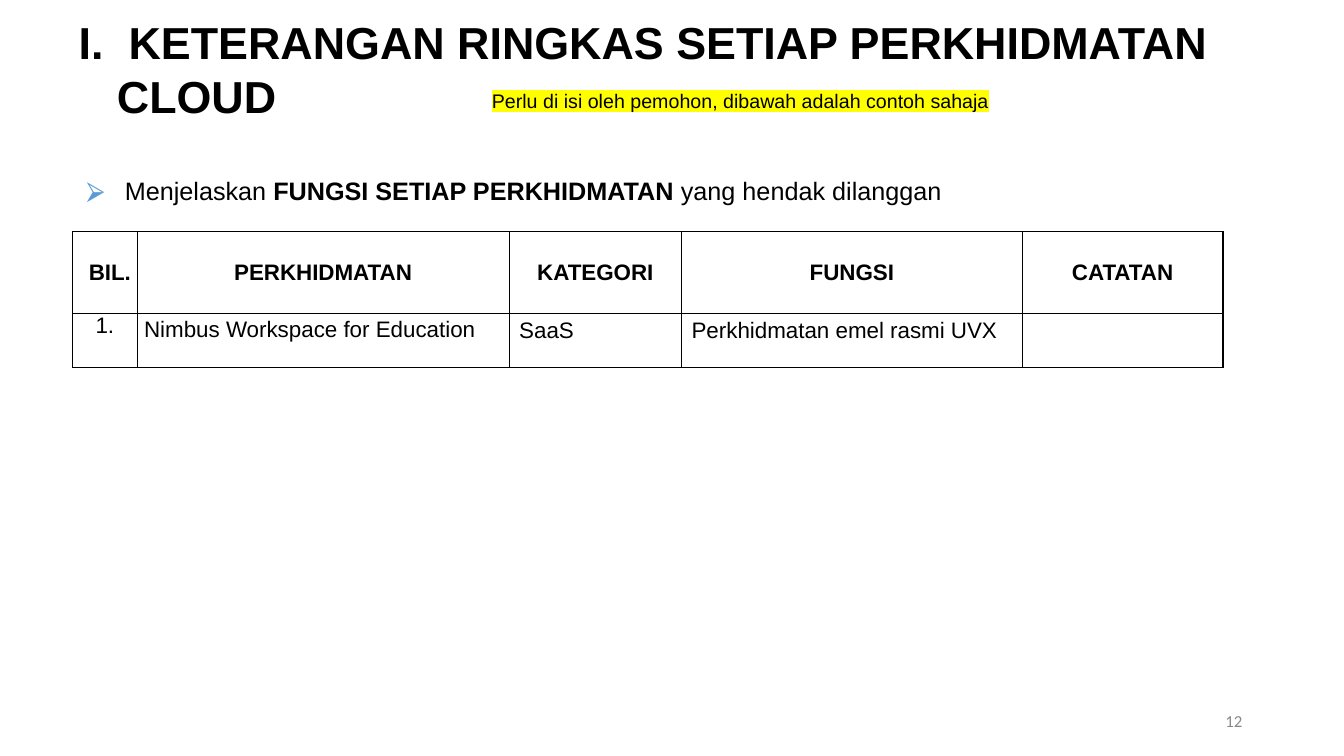
"""Build the slide that describes each cloud service."""
from dataclasses import dataclass

from lxml.etree import SubElement
from pptx import Presentation
from pptx.dml.color import RGBColor
from pptx.enum.text import MSO_ANCHOR, PP_ALIGN
from pptx.oxml.ns import qn
from pptx.util import Inches, Pt

TITLE = [("I.", {}), (" ", {"spacing": 9}),
         ("KETERANGAN RINGKAS SETIAP PERKHIDMATAN CLOUD", {})]
NOTICE = "Perlu di isi oleh pemohon, dibawah adalah contoh sahaja"
POINT = [("Menjelaskan ", {}), ("FUNGSI SETIAP PERKHIDMATAN ", {"bold": True}),
         ("yang hendak dilanggan", {})]
PAGE_NUMBER = "12"
HEADERS = ["BIL.", "PERKHIDMATAN", "KATEGORI", "FUNGSI", "CATATAN"]
SERVICES = [["1.", "Nimbus Workspace for Education", "SaaS", "Perkhidmatan emel rasmi UVX", ""]]
COLUMNS = [0.64, 3.69, 1.71, 3.38, 1.99]
HEADER_ROW, SERVICE_ROW = 0.81, 0.54
LEFT, TABLE_TOP = 0.72, 2.3
HANGING = 0.38
TIGHT, SNUG, ROOMY = (0.01, 0.01, 0.01, 0), (0.07, 0.04, 0.07, 0.04), (0.1, 0.05, 0.1, 0.05)
HEADER_MARGINS = [(0, 0, 0, 0)] * 2 + [TIGHT] * 3
SERVICE_MARGINS = [TIGHT, SNUG, ROOMY, ROOMY, ROOMY]


@dataclass(frozen=True)
class Theme:
    """Colours, fonts and type sizes."""
    ink: str = "000000"
    muted: str = "888888"
    accent: str = "5B9BD5"
    marker: str = "FFFF00"
    font: str = "Arial"
    number_font: str = "Calibri"
    title: int = 32
    point: int = 18
    cell: int = 16
    notice: int = 14
    number: int = 12


THEME = Theme()


def add_colour(parent, colour):
    """Append an RGB colour to an XML element."""
    SubElement(parent, qn("a:srgbClr"), val=colour)


def write(para, text, size=THEME.cell, font=THEME.font, colour=THEME.ink, bold=False,
          highlight=None, spacing=None, align=None, hanging=0, indent=0, bullet=None,
          line_spacing=None):
    """Write a string, or a list of (string, format) pairs, into a paragraph."""
    spans = [(text, {})] if isinstance(text, str) else text
    if align is not None:
        para.alignment = align
    if line_spacing:
        para.line_spacing = line_spacing
    properties = para._p.get_or_add_pPr()
    if hanging or indent:
        properties.set("marL", str(Inches(hanging or indent)))
        properties.set("indent", str(-Inches(hanging)))
    if bullet:
        add_colour(SubElement(properties, qn("a:buClr")), THEME.accent)
        SubElement(properties, qn("a:buFont"), typeface=font)
        SubElement(properties, qn("a:buChar"), char=bullet)
    for words, extra in spans:
        span = para.add_run()
        span.text = words
        span.font.size = Pt(size)
        span.font.bold = extra.get("bold", bold)
        span.font.color.rgb = RGBColor.from_string(colour)
        span.font.name = font
        run_properties = span._r.get_or_add_rPr()
        if extra.get("spacing", spacing):
            run_properties.set("spc", str(extra.get("spacing", spacing) * 100))
        if highlight:
            mark = SubElement(run_properties, qn("a:highlight"))
            add_colour(mark, highlight)
            run_properties.find(qn("a:latin")).addprevious(mark)


def set_margins(target, margins):
    """Set left, top, right and bottom margins of a text frame or cell."""
    for side, margin in zip(("left", "top", "right", "bottom"), margins):
        setattr(target, f"margin_{side}", Inches(margin))


def add_text(page, place, text, margins=ROOMY, wrap=True, anchor=MSO_ANCHOR.TOP, **style):
    """Add a text box at left, top, width, height."""
    box = page.shapes.add_textbox(*map(Inches, place))
    frame = box.text_frame
    frame.word_wrap = wrap
    frame.vertical_anchor = anchor
    set_margins(frame, margins)
    write(frame.paragraphs[0], text, **style)


def add_borders(cell):
    """Draw a thin line on all four sides of a cell."""
    properties = cell._tc.get_or_add_tcPr()
    for order, side in enumerate(("lnL", "lnR", "lnT", "lnB")):
        line = SubElement(properties, qn(f"a:{side}"), w=str(Pt(1)))
        add_colour(SubElement(line, qn("a:solidFill")), THEME.ink)
        properties.insert(order, line)


def add_services(page):
    """Add the table of services."""
    rows = [HEADERS] + SERVICES
    heights = [HEADER_ROW] + [SERVICE_ROW] * len(SERVICES)
    place = (LEFT, TABLE_TOP, sum(COLUMNS), sum(heights))
    table = page.shapes.add_table(len(rows), len(COLUMNS), *map(Inches, place)).table
    table.first_row = table.horz_banding = False
    for column, width in zip(table.columns, COLUMNS):
        column.width = Inches(width)
    for r, (row, height) in enumerate(zip(rows, heights)):
        table.rows[r].height = Inches(height)
        header = r == 0
        for c, text in enumerate(row):
            cell = table.cell(r, c)
            cell.fill.background()
            add_borders(cell)
            set_margins(cell, (HEADER_MARGINS if header else SERVICE_MARGINS)[c])
            cell.vertical_anchor = MSO_ANCHOR.MIDDLE if header else MSO_ANCHOR.TOP
            if text:
                write(cell.text_frame.paragraphs[0], text, bold=header,
                      align=PP_ALIGN.CENTER if header or c == 0 else PP_ALIGN.LEFT,
                      indent=0.1 if header and c == 0 else 0,
                      line_spacing=0.94 if not header and c == 0 else None)


def main():
    """Assemble and save the deck."""
    deck = Presentation()
    deck.slide_width, deck.slide_height = Inches(13.33), Inches(7.5)
    page = deck.slides.add_slide(deck.slide_layouts[6])
    add_text(page, (LEFT, 0.12, 11.56, 0.78), TITLE, margins=(0.06, 0.03, 0.06, 0.03),
             size=THEME.title, bold=True, hanging=HANGING)
    add_text(page, (0.76, 1.69, 11.91, 1.49), POINT, size=THEME.point,
             hanging=HANGING, bullet="⮚")
    add_text(page, (9.42, 6.95, 3, 0.4), PAGE_NUMBER, anchor=MSO_ANCHOR.MIDDLE,
             size=THEME.number, font=THEME.number_font, colour=THEME.muted,
             align=PP_ALIGN.RIGHT)
    add_services(page)
    add_text(page, (4.78, 0.83, 5.15, 0.34), NOTICE, wrap=False, size=THEME.notice,
             highlight=THEME.marker)
    deck.save("out.pptx")


if __name__ == "__main__":
    main()
